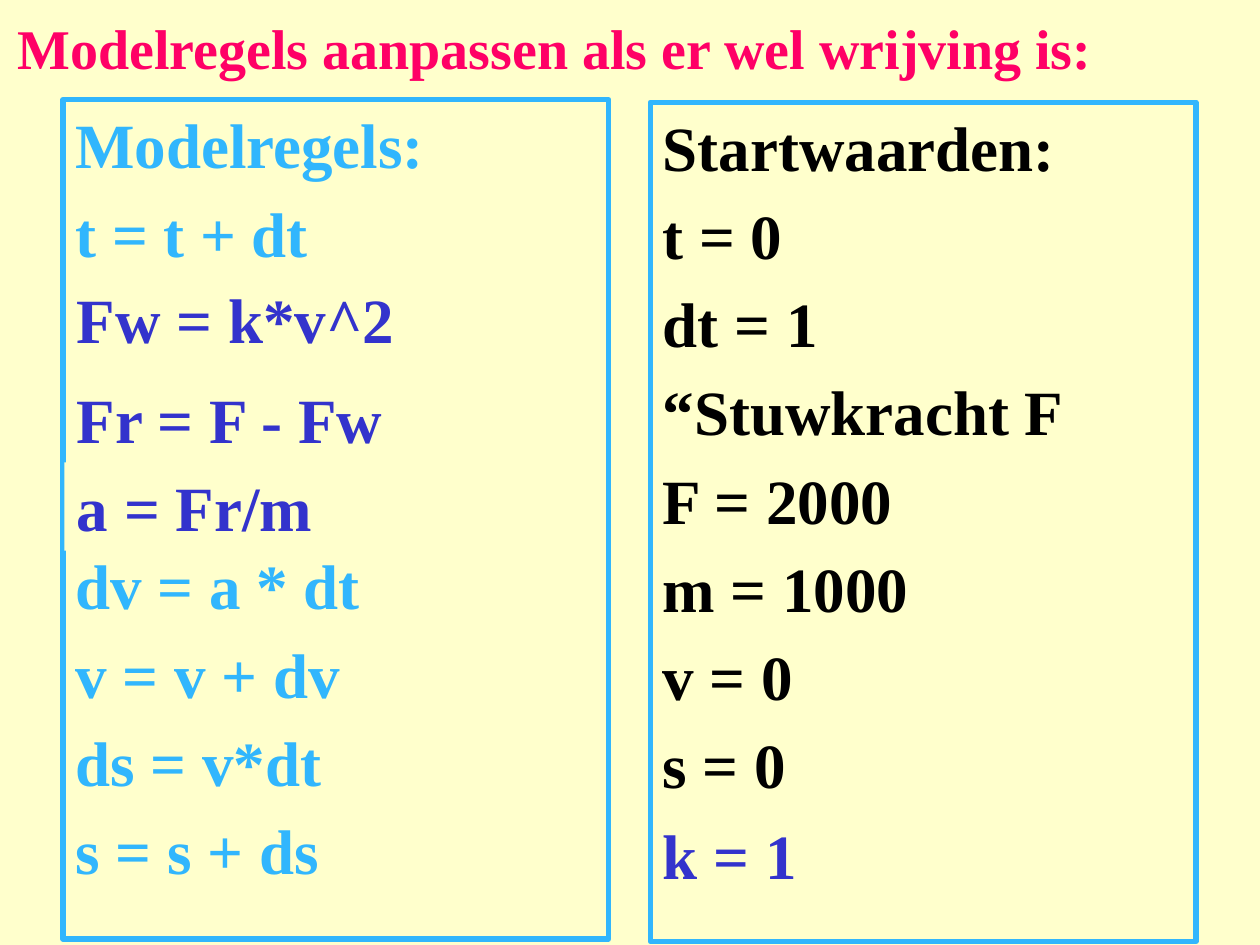
from pptx import Presentation
from pptx.dml.color import RGBColor
from pptx.enum.shapes import MSO_SHAPE
from pptx.enum.text import MSO_ANCHOR, PP_ALIGN
from pptx.util import Cm, Pt

RECTANGLE = MSO_SHAPE.RECTANGLE
TOP, MIDDLE = MSO_ANCHOR.TOP, MSO_ANCHOR.MIDDLE
LEFT = PP_ALIGN.LEFT

COLOURS = {
    "background": "FFFFCC",
    "title": "FF0066",
    "model": "31B6FD",
    "start": "000000",
    "change": "3333CC",
}
FONT = "Times New Roman"
BODY_SIZE = 36
LINE_GAP = 0.2 * BODY_SIZE
LINE_PITCH = 1.4 * BODY_SIZE
PANEL_WIDTH, PANEL_HEIGHT = 11, 16.92
LINE_HEIGHT = 1.78


def colour(name):
    return RGBColor.from_string(COLOURS[name])


def write_lines(shape, lines, ink, size=BODY_SIZE, anchor=TOP, gaps=None):
    """Fill a shape with bold lines; gaps maps a line number to its space before."""
    frame = shape.text_frame
    frame.word_wrap = True
    frame.vertical_anchor = anchor
    frame.text = "\n".join(lines)
    for number, para in enumerate(frame.paragraphs):
        para.alignment = LEFT
        default_gap = LINE_GAP if number else 0
        para.space_before = Pt((gaps or {}).get(number, default_gap))
        para.font.name = FONT
        para.font.size = Pt(size)
        para.font.bold = True
        para.font.color.rgb = colour(ink)


def add_title(page, left, top, width, height):
    box = page.shapes.add_textbox(Cm(left), Cm(top), Cm(width), Cm(height))
    write_lines(box, ["Modelregels aanpassen als er wel wrijving is:"],
                "title", size=32, anchor=MIDDLE)


def add_panel(page, left, top, lines, ink, gaps=None):
    panel = page.shapes.add_shape(RECTANGLE, Cm(left), Cm(top),
                                  Cm(PANEL_WIDTH), Cm(PANEL_HEIGHT))
    panel.shadow.inherit = False
    panel.fill.background()
    panel.line.color.rgb = colour("model")
    panel.line.width = Pt(3)
    write_lines(panel, lines, ink, gaps=gaps)


def add_change(page, left, top, text, width=PANEL_WIDTH, filled=False):
    """Place one adapted line, optionally on a background-coloured strip."""
    box = page.shapes.add_textbox(Cm(left), Cm(top), Cm(width), Cm(LINE_HEIGHT))
    if filled:
        box.fill.solid()
        box.fill.fore_color.rgb = colour("background")
    write_lines(box, [text], "change")


def add_model_rules(page, left, top):
    lines = ["Modelregels:", "t = t + dt", "dv = a * dt", "v = v + dv",
             "ds = v*dt", "s = s + ds"]
    # Three rows stay open for the adapted rules
    add_panel(page, left, top, lines, "model",
              gaps={2: LINE_GAP + 3 * LINE_PITCH})
    inner = left + 0.03
    add_change(page, inner, top + 3.53, "Fw = k*v^2")
    add_change(page, inner, top + 7.31, "a = Fr/m", width=6.2, filled=True)
    add_change(page, inner, top + 5.53, "Fr = F - Fw")


def add_start_values(page, left, top):
    lines = ["Startwaarden:", "t = 0", "dt = 1", "“Stuwkracht F",
             "F = 2000", "m = 1000", "v = 0", "s = 0"]
    add_panel(page, left, top, lines, "start")
    add_change(page, left, top + 14.27, "k = 1")


def main():
    deck = Presentation()
    deck.slide_width, deck.slide_height = Cm(25.4), Cm(19.05)
    page = deck.slides.add_slide(deck.slide_layouts[6])
    page.background.fill.solid()
    page.background.fill.fore_color.rgb = colour("background")

    add_title(page, 0.1, 0, 22.9, 1.9)
    add_model_rules(page, 1.27, 2.01)
    add_start_values(page, 13.11, 2.06)
    deck.save("out.pptx")


if __name__ == "__main__":
    main()
